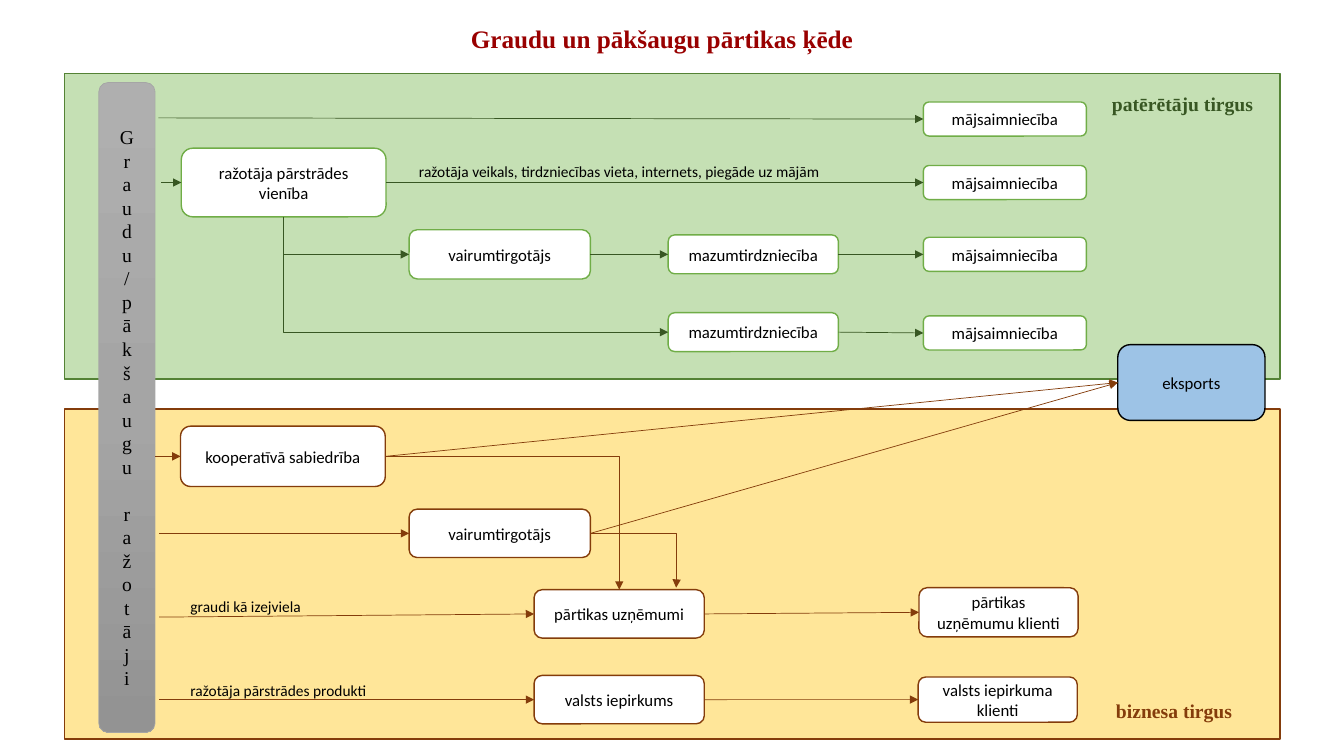
import copy

import lxml.etree
import pptx
import pptx.dml.color
import pptx.enum.shapes
import pptx.enum.text
import pptx.oxml.ns
import pptx.util

RGBColor = pptx.dml.color.RGBColor
Cm = pptx.util.Cm
Pt = pptx.util.Pt
Shapes = pptx.enum.shapes.MSO_SHAPE
Connectors = pptx.enum.shapes.MSO_CONNECTOR
Align = pptx.enum.text.PP_ALIGN
Anchor = pptx.enum.text.MSO_ANCHOR
qn = pptx.oxml.ns.qn

BLACK = RGBColor(0x00, 0x00, 0x00)
WHITE = RGBColor(0xFF, 0xFF, 0xFF)
RED = RGBColor(0x99, 0x00, 0x00)
GREEN_BAND = RGBColor(0xC5, 0xE0, 0xB4)
GREEN_EDGE = RGBColor(0x54, 0x82, 0x35)
GREEN = RGBColor(0x70, 0xAD, 0x47)
DARK_GREEN = RGBColor(0x38, 0x57, 0x23)
YELLOW_BAND = RGBColor(0xFF, 0xE6, 0x99)
BROWN = RGBColor(0x84, 0x3C, 0x0B)
BLUE = RGBColor(0x9D, 0xC3, 0xE6)
GRAYS = [RGBColor(0xAF, 0xAF, 0xAF), RGBColor(0xA5, 0xA5, 0xA5), RGBColor(0x93, 0x93, 0x93)]

TOP, LEFT, BOTTOM, RIGHT = range(4)
SERIF = "Times New Roman"
SANS = "Calibri"


def write(shape, text, font=SANS, size=12, color=BLACK, bold=False,
          align=Align.CENTER, anchor=Anchor.MIDDLE, spacing=None):
    frame = shape.text_frame
    frame.word_wrap = True
    frame.vertical_anchor = anchor
    para = frame.paragraphs[0]
    para.alignment = align
    para.line_spacing = spacing
    span = para.add_run()
    span.text = text
    span.font.name = font
    span.font.size = Pt(size)
    span.font.bold = bold
    span.font.color.rgb = color


class ChainSlide:
    def __init__(self, page):
        self.page = page

    def shape(self, kind, left, top, width, height, fill, edge, weight=1):
        shape = self.page.shapes.add_shape(kind, Cm(left), Cm(top), Cm(width), Cm(height))
        shape.shadow.inherit = False
        if fill is not None:
            shape.fill.solid()
            shape.fill.fore_color.rgb = fill
        shape.line.color.rgb = edge
        shape.line.width = Pt(weight)
        return shape

    def band(self, top, height, fill, edge):
        self.shape(Shapes.RECTANGLE, 1.63, top, 30.63, height, fill, edge)

    def label(self, text, left, top, width, height, **style):
        box = self.page.shapes.add_textbox(Cm(left), Cm(top), Cm(width), Cm(height))
        write(box, text, **style)

    def box(self, text, left, middle, width, height, edge, fill=WHITE):
        """Rounded box placed by its left side and vertical middle."""
        box = self.shape(Shapes.ROUNDED_RECTANGLE, left, middle - height / 2,
                         width, height, fill, edge)
        write(box, text)
        return box

    def bar(self, text, left, top, width, height):
        """Gray gradient bar with stacked upright letters."""
        bar = self.shape(Shapes.ROUNDED_RECTANGLE, left, top, width, height,
                         None, GRAYS[1], 0.5)
        bar.fill.gradient()
        bar.fill.gradient_angle = 270
        stops = bar._element.spPr.find(qn("a:gradFill")).find(qn("a:gsLst"))
        stops.insert(1, copy.deepcopy(stops[0]))
        for stop, position, gray in zip(bar.fill.gradient_stops, (0, 0.5, 1), GRAYS):
            stop.position = position
            stop.color.rgb = gray
        write(bar, text, font=SERIF, size=14)
        bar.text_frame._txBody.bodyPr.set("vert", "wordArtVert")

    def connector(self, kind, color):
        line = self.page.shapes.add_connector(kind, 0, 0, 0, 0)
        line.line.color.rgb = color
        line.line.width = Pt(0.5)
        properties = line._element.spPr
        lxml.etree.SubElement(properties.find(qn("a:ln")), qn("a:tailEnd"), type="triangle")
        lxml.etree.SubElement(properties, qn("a:effectLst"))
        return line

    def arrow(self, start, target, color):
        """Straight arrow from a box, or from an (x, y) point, to a box."""
        line = self.connector(Connectors.STRAIGHT, color)
        if isinstance(start, tuple):
            line.begin_x, line.begin_y = Cm(start[0]), Cm(start[1])
        else:
            line.begin_connect(start, RIGHT)
        line.end_connect(target, LEFT)

    def corner(self, source, target, color, down_first=False):
        """One-bend arrow: right then down, or down then right."""
        line = self.connector(Connectors.ELBOW, color)
        line.begin_connect(source, BOTTOM if down_first else RIGHT)
        line.end_connect(target, LEFT if down_first else TOP)
        properties = line._element.spPr
        properties.find(qn("a:prstGeom")).set("prst", "bentConnector2")
        if down_first:
            across, down = line.width, line.height
            line.left += (across - down) // 2
            line.top += (down - across) // 2
            line.width, line.height = down, across
            frame = properties.find(qn("a:xfrm"))
            frame.set("rot", "16200000")
            frame.set("flipH", "1")

    def drop(self, source, x, y, color):
        """Arrow going right from a box, then down to a free point."""
        line = self.connector(Connectors.ELBOW, color)
        line.begin_connect(source, RIGHT)
        line.end_x, line.end_y = Cm(x), Cm(y)
        guides = line._element.spPr.find(qn("a:prstGeom")).find(qn("a:avLst"))
        lxml.etree.SubElement(guides, qn("a:gd"), name="adj1", fmla="val 100600")


def main():
    deck = pptx.Presentation()
    deck.slide_width, deck.slide_height = Cm(33.87), Cm(19.05)
    chain = ChainSlide(deck.slides.add_slide(deck.slide_layouts[6]))

    chain.band(10.31, 8.31, YELLOW_BAND, BROWN)
    chain.band(1.85, 7.7, GREEN_BAND, GREEN_EDGE)
    chain.label("Graudu un pākšaugu pārtikas ķēde", 2.08, 0.48, 29.21, 1.09,
                font=SERIF, size=18, color=RED, bold=True, spacing=0.9)
    chain.bar("Graudu/pākšaugu ražotāji", 2.49, 2.08, 1.42, 16.38)

    # Consumer market
    homes = [chain.box("mājsaimniecība", 23.27, middle, 4.11, 0.86, GREEN)
             for middle in (3, 4.6, 6.41, 8.39)]
    processor = chain.box("ražotāja pārstrādes vienība", 4.57, 4.6, 5.16, 1.73, GREEN)
    wholesaler = chain.box("vairumtirgotājs", 10.31, 6.41, 4.57, 1.24, GREEN)
    shops = [chain.box("mazumtirdzniecība", 16.84, middle, 4.29, 0.98, GREEN)
             for middle in (6.41, 8.37)]

    # Business market
    cooperative = chain.box("kooperatīvā sabiedrība", 4.55, 11.5, 5.16, 1.52, BROWN)
    trader = chain.box("vairumtirgotājs", 10.31, 13.44, 4.57, 1.22, BROWN)
    food_firms = chain.box("pārtikas uzņēmumi", 13.46, 15.47, 4.29, 1.22, BROWN)
    procurement = chain.box("valsts iepirkums", 13.46, 17.63, 4.29, 1.22, BROWN)
    firm_clients = chain.box("pārtikas uzņēmumu klienti", 23.16, 15.43, 4.01, 1.24, BROWN)
    state_clients = chain.box("valsts iepirkuma klienti", 23.14, 17.63, 4.01, 1.14, BROWN)
    export = chain.box("eksports", 28.17, 9.64, 3.71, 1.91, BLACK, fill=BLUE)

    for start, target in [((3.99, 2.97), homes[0]), ((4.06, 4.6), processor),
                          (processor, homes[1]), (wholesaler, shops[0]),
                          (shops[0], homes[2]), (shops[1], homes[3])]:
        chain.arrow(start, target, DARK_GREEN)
    for target in (wholesaler, shops[1]):
        chain.corner(processor, target, DARK_GREEN, down_first=True)

    for start, target in [((3.91, 11.5), cooperative), ((4.01, 13.44), trader),
                          ((4.01, 15.55), food_firms), ((4.01, 17.63), procurement),
                          (food_firms, firm_clients), (procurement, state_clients),
                          (cooperative, export), (trader, export)]:
        chain.arrow(start, target, BROWN)
    chain.corner(cooperative, food_firms, BROWN)
    chain.drop(trader, 17.04, 14.81, BROWN)

    market = dict(font=SERIF, size=14, bold=True, anchor=Anchor.TOP)
    chain.label("patērētāju tirgus", 27.66, 2.18, 4.29, 0.86, color=DARK_GREEN, **market)
    chain.label("biznesa tirgus", 27.66, 17.48, 3.86, 0.86, color=BROWN, **market)
    for text, left, top, width in [
            ("ražotāja veikals, tirdzniecības vieta, internets, piegāde uz mājām",
             10.31, 3.96, 13.54),
            ("graudi kā izejviela", 4.55, 14.91, 3.5),
            ("ražotāja pārstrādes produkti", 4.55, 17.04, 7.82)]:
        chain.label(text, left, top, width, 0.74, size=11,
                    align=Align.LEFT, anchor=Anchor.TOP)

    deck.save("out.pptx")


if __name__ == "__main__":
    main()
